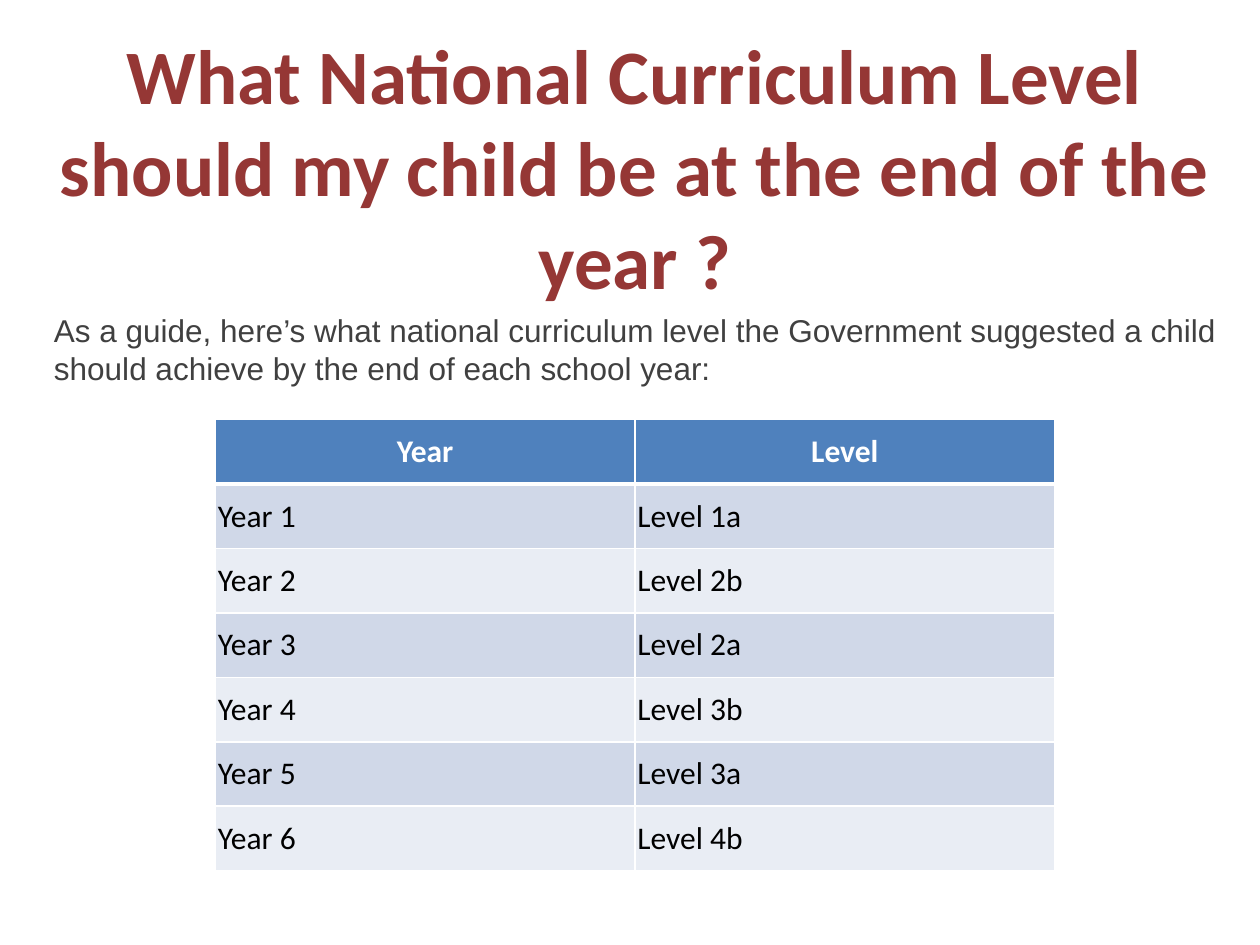
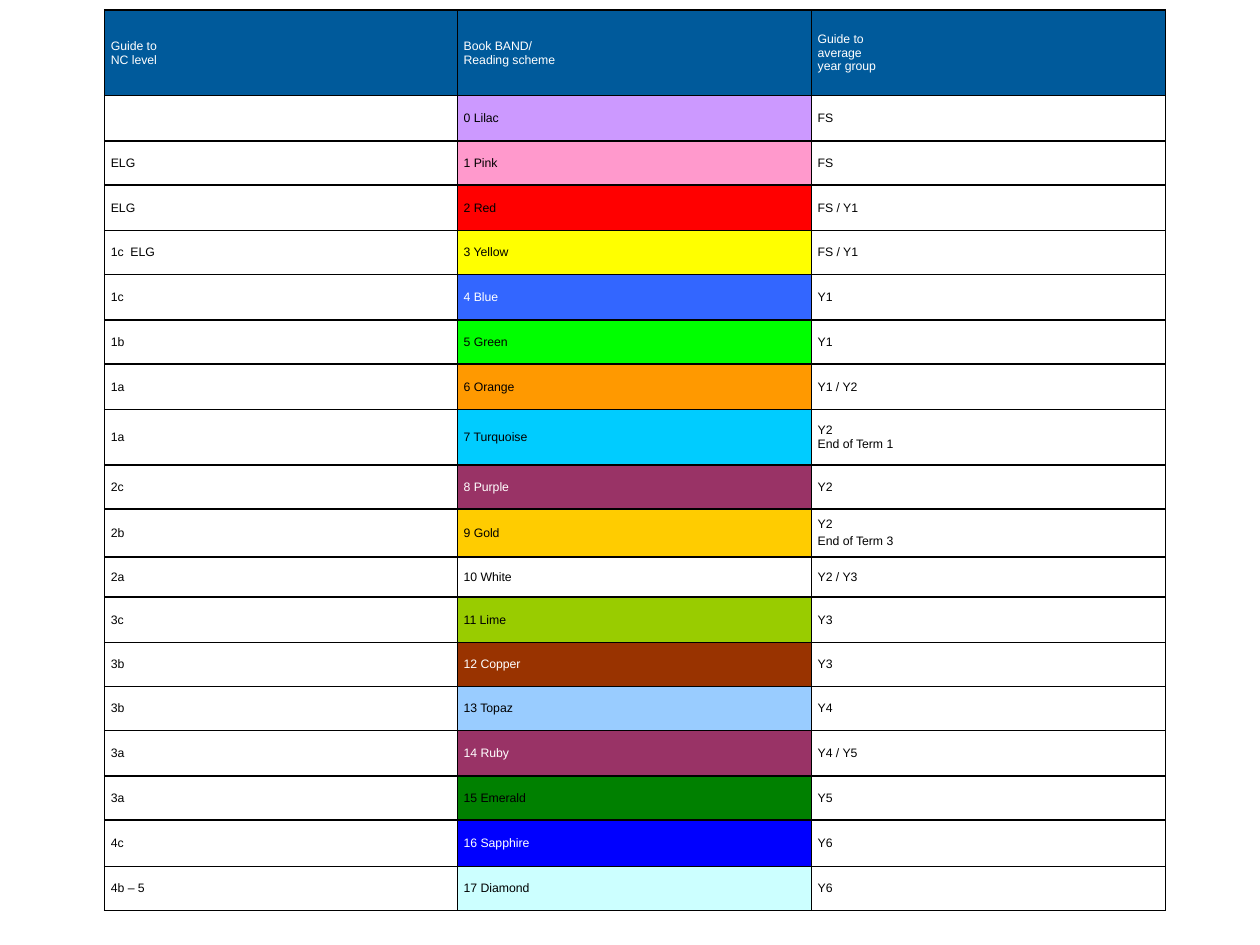
"""Build two slides on expected curriculum levels and reading book bands."""
import copy

from lxml import etree
from pptx import Presentation
from pptx import util as u
from pptx.dml.color import RGBColor
from pptx.enum import text as t
from pptx.oxml import ns

BLACK, WHITE = "000000", "FFFFFF"
TITLE = {"name": "Calibri", "size": u.Pt(44), "bold": True, "color": "953735"}
INTRO = {"name": "Arial", "size": u.Pt(18), "color": "404040"}
LEVEL_HEAD = {"name": "Calibri", "size": u.Pt(18), "bold": True, "color": WHITE}
LEVEL_BODY = {**LEVEL_HEAD, "bold": False, "color": BLACK}
BAND_BODY = {"name": "Arial", "size": u.Pt(7), "color": BLACK}
BAND_LIGHT = {**BAND_BODY, "color": WHITE}

LEVELS = ["1a", "2b", "2a", "3b", "3a", "4b"]
LEVEL_STRIPES = ["D0D8E8", "E9EDF4"]
BAND_HEAD_FILL = "005A9B"
BAND_HEADINGS = ["Guide to\vNC level", "Book BAND/\vReading scheme",
                 "Guide to\vaverage\vyear group"]
BANDS = [
    ("", "Lilac", "FS", "CC99FF", 0.36),
    ("ELG", "Pink", "FS", "FF99CC", 0.35),
    ("ELG", "Red", "FS / Y1", "FF0000", 0.36),
    ("1c  ELG", "Yellow", "FS / Y1", "FFFF00", 0.35),
    ("1c", "Blue", "Y1", "3366FF", 0.36),
    ("1b", "Green", "Y1", "00FF00", 0.35),
    ("1a", "Orange", "Y1 / Y2", "FF9900", 0.36),
    ("1a", "Turquoise", "Y2\vEnd of Term 1", "00CCFF", 0.44),
    ("2c", "Purple", "Y2", "993366", 0.35),
    ("2b", "Gold", "Y2\nEnd of Term 3", "FFCC00", 0.38),
    ("2a", "White", "Y2 / Y3", WHITE, 0.32),
    ("3c", "Lime", "Y3", "99CC00", 0.36),
    ("3b", "Copper", "Y3", "993300", 0.35),
    ("3b", "Topaz", "Y4", "99CCFF", 0.35),
    ("3a", "Ruby", "Y4 / Y5", "993366", 0.36),
    ("3a", "Emerald", "Y5", "008000", 0.35),
    ("4c", "Sapphire", "Y6", "0000FF", 0.37),
    ("4b – 5", "Diamond", "Y6", "CCFFFF", 0.35),
]
LIGHT_TEXT_BANDS = {"Blue", "Purple", "Copper", "Ruby", "Sapphire"}


def rgb(color):
    """Turn a hex string into a colour."""
    return RGBColor.from_string(color)


def line_element(tag, color, points):
    """Return a solid line element of the given tag."""
    line = etree.Element(ns.qn(tag), w=str(u.Pt(points)))
    fill = etree.SubElement(line, ns.qn("a:solidFill"))
    etree.SubElement(fill, ns.qn("a:srgbClr"), val=color)
    return line


def format_font(font, style):
    """Set the font attributes held in a style."""
    for name, value in style.items():
        if name == "color":
            font.color.rgb = rgb(value)
        else:
            setattr(font, name, value)


def write_text(frame, content, style, **paragraph_format):
    """Fill a text frame and format its paragraphs, runs and line breaks."""
    frame.text = content
    for paragraph in frame.paragraphs:
        for name, value in paragraph_format.items():
            setattr(paragraph, name, value)
        for run in paragraph.runs:
            format_font(run.font, style)
            properties = run.font._rPr
        for line_break in paragraph._p.findall(ns.qn("a:br")):
            line_break.append(copy.deepcopy(properties))


def add_text(slide, box, content, style, alignment=t.PP_ALIGN.LEFT):
    """Add a wrapping text box and return its first run."""
    shape = slide.shapes.add_textbox(*map(u.Inches, box))
    frame = shape.text_frame
    write_text(frame, content, style, alignment=alignment)
    frame.word_wrap = True
    frame.auto_size = t.MSO_AUTO_SIZE.SHAPE_TO_FIT_TEXT
    return frame.paragraphs[0].runs[0]


def add_plain_table(slide, left, top, widths, heights):
    """Add a table without banding, sized by its columns and rows."""
    table = slide.shapes.add_table(
        len(heights), len(widths), u.Inches(left), u.Inches(top),
        u.Inches(sum(widths)), u.Inches(sum(heights))).table
    table.first_row = table.horz_banding = False
    for column, width in zip(table.columns, widths):
        column.width = u.Inches(width)
    for row, height in zip(table.rows, heights):
        row.height = u.Inches(height)
    return table


def format_cell(cell, fill, margins, border, **edge_widths):
    """Set the margins, borders and fill of a cell."""
    cell.vertical_anchor = t.MSO_ANCHOR.MIDDLE
    sides = ("margin_left", "margin_top", "margin_right", "margin_bottom")
    for side, margin in zip(sides, margins):
        setattr(cell, side, u.Inches(margin))
    properties = cell._tc.get_or_add_tcPr()
    for edge in "LRTB":
        properties.append(line_element(f"a:ln{edge}", border, edge_widths.get(edge, 1)))
    cell.fill.solid()
    cell.fill.fore_color.rgb = rgb(fill)


def add_level_table(slide):
    """Add the table of expected levels by school year."""
    rows = [("Year", "Level")]
    rows += [(f"Year {year}", f"Level {level}") for year, level in enumerate(LEVELS, 1)]
    table = add_plain_table(slide, 1.71, 3.33, [3.33] * 2, [3.58 / len(rows)] * len(rows))
    for row, contents in enumerate(rows):
        heading = row == 0
        fill = "4F81BD" if heading else LEVEL_STRIPES[(row - 1) % 2]
        edges = {0: {"B": 3}, 1: {"T": 3}}.get(row, {})
        for column, content in enumerate(contents):
            cell = table.cell(row, column)
            format_cell(cell, fill, [0.02] * 4, WHITE, **edges)
            write_text(cell.text_frame, content, LEVEL_HEAD if heading else LEVEL_BODY,
                       alignment=t.PP_ALIGN.CENTER if heading else t.PP_ALIGN.LEFT)


def add_band_table(slide):
    """Add the table of book bands with their levels and year groups."""
    rows = [[(heading, BAND_HEAD_FILL, BAND_LIGHT) for heading in BAND_HEADINGS]]
    for number, (level, band, year, color, _) in enumerate(BANDS):
        band_style = BAND_LIGHT if band in LIGHT_TEXT_BANDS else BAND_BODY
        rows.append([(level, WHITE, BAND_BODY),
                     (f"{number} {band}", color, band_style),
                     (year, WHITE, BAND_BODY)])
    heights = [0.68] + [band[-1] for band in BANDS]
    table = add_plain_table(slide, 0.83, 0.08, [2.8, 2.81, 2.81], heights)
    for row, contents in enumerate(rows):
        for column, (content, fill, style) in enumerate(contents):
            cell = table.cell(row, column)
            format_cell(cell, fill, [0.05, 0, 0.05, 0], BLACK)
            write_text(cell.text_frame, content, style, space_before=u.Pt(2))


def main():
    """Build and save the presentation."""
    presentation = Presentation()
    presentation.slide_width, presentation.slide_height = u.Inches(10), u.Inches(7.5)
    blank = presentation.slide_layouts[6]

    level_slide = presentation.slides.add_slide(blank)
    title = add_text(level_slide, (0.33, 0.17, 9.42, 2.32),
                     "What National Curriculum Level should my child be at the end of the year ?",
                     TITLE, t.PP_ALIGN.CENTER)
    title.font._rPr.insert(0, line_element("a:ln", "7EA6EA", 2.48))
    add_text(level_slide, (0.33, 2.42, 9.42, 1.31),
             "As a guide, here’s what national curriculum level the Government suggested "
             "a child should achieve by the end of each school year:", INTRO)
    add_level_table(level_slide)

    add_band_table(presentation.slides.add_slide(blank))
    presentation.save("out.pptx")


if __name__ == "__main__":
    main()
